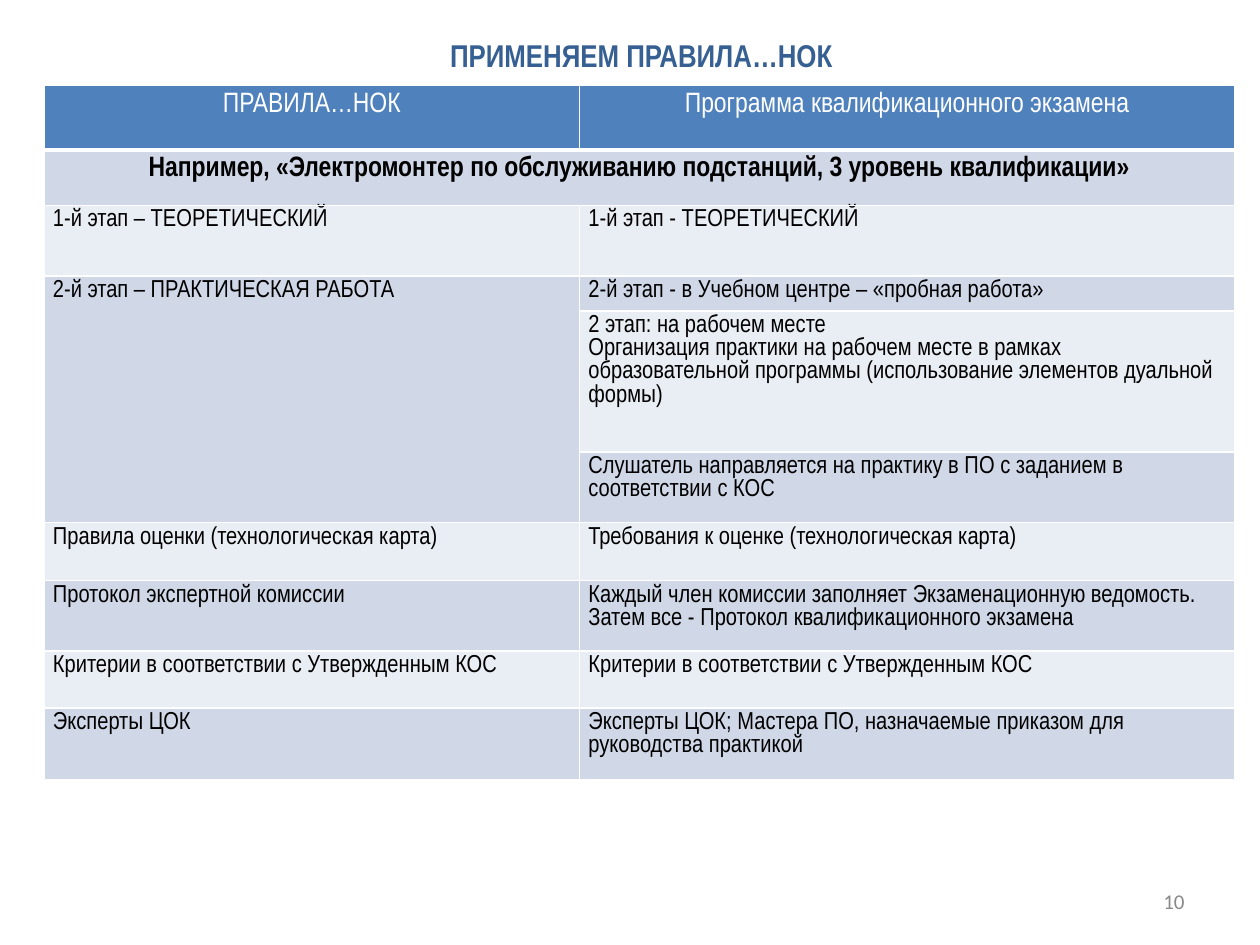
"""Build the slide that compares the assessment rules with the exam programme."""
from lxml import etree
from pptx import Presentation
from pptx.dml.color import RGBColor
from pptx.enum.text import MSO_ANCHOR, PP_ALIGN
from pptx.oxml.ns import qn
from pptx.util import Inches, Pt

LEFT, MID, RIGHT = PP_ALIGN.LEFT, PP_ALIGN.CENTER, PP_ALIGN.RIGHT
JUST = PP_ALIGN.JUSTIFY
CENTER = MSO_ANCHOR.MIDDLE

THEME = {
    "title": {"name": "Arial Narrow", "size": 18, "color": "376092", "bold": True},
    "head": {"name": "Arial Narrow", "size": 16, "color": "FFFFFF", "bold": False},
    "lead": {"name": "Arial Narrow", "size": 16, "color": "000000", "bold": True},
    "body": {"name": "Arial Narrow", "size": 14, "color": "000000", "bold": False},
    "page": {"name": "Calibri", "size": 12, "color": "898989", "bold": False},
    "top": "4F81BD",
    "bands": ("D0D8E8", "E9EDF4"),
    "rule": "FFFFFF",
}

TITLE = "ПРИМЕНЯЕМ ПРАВИЛА…НОК"
PAGE = "10"
COLS = (4.25, 5.2)
ROWS = [
    (0.51, "ПРАВИЛА…НОК", "Программа квалификационного экзамена"),
    (0.44, "Например, «Электромонтер по обслуживанию подстанций, "
           "3 уровень квалификации»", ""),
    (0.56, "1-й этап – ТЕОРЕТИЧЕСКИЙ", "1-й этап - ТЕОРЕТИЧЕСКИЙ"),
    (0.28, "2-й этап – ПРАКТИЧЕСКАЯ РАБОТА",
     "2-й этап - в Учебном центре – «пробная работа»"),
    (1.12, "", "2 этап: на рабочем месте\nОрганизация практики на рабочем месте "
               "в рамках образовательной программы (использование элементов "
               "дуальной формы)"),
    (0.56, "", "Слушатель направляется на практику в ПО с заданием в "
               "соответствии с КОС"),
    (0.46, "Правила оценки (технологическая карта)",
     "Требования к оценке (технологическая карта)"),
    (0.56, "Протокол экспертной комиссии",
     "Каждый член комиссии заполняет Экзаменационную ведомость. "
     "Затем все - Протокол квалификационного экзамена"),
    (0.45, "Критерии в соответствии с Утвержденным КОС",
     "Критерии в соответствии с Утвержденным КОС"),
    (0.57, "Эксперты ЦОК",
     "Эксперты ЦОК; Мастера ПО, назначаемые приказом для руководства практикой"),
]
MERGES = [((1, 0), (1, 1)), ((3, 0), (5, 0))]
PADS = {"left": 0.07, "top": 0.03, "right": 0.07, "bottom": 0}


def write(frame, text, style, align):
    frame.text = text
    look = dict(THEME[style])
    look["size"] = Pt(look["size"])
    color = RGBColor.from_string(look.pop("color"))
    for para in frame.paragraphs:
        para.alignment = align
        for run in para.runs:
            for key, value in look.items():
                setattr(run.font, key, value)
            run.font.color.rgb = color


def place(shape, left, top, width, height):
    box = {"left": left, "top": top, "width": width, "height": height}
    for key, value in box.items():
        setattr(shape, key, Inches(value))


def edge(cell, widths):
    props = cell._tc.get_or_add_tcPr()
    for spot, (side, width) in enumerate(widths.items()):
        line = etree.Element(qn("a:ln" + side), w=str(Pt(width)))
        fill = etree.SubElement(line, qn("a:solidFill"))
        etree.SubElement(fill, qn("a:srgbClr"), val=THEME["rule"])
        props.insert(spot, line)


def fill_table(table):
    for col, width in zip(table.columns, COLS):
        col.width = Inches(width)
    for first, last in MERGES:
        table.cell(*first).merge(table.cell(*last))
    for r, (height, *texts) in enumerate(ROWS):
        table.rows[r].height = Inches(height)
        style = {0: "head", 1: "lead"}.get(r, "body")
        shade = THEME["bands"][(r - 1) % 2] if r else THEME["top"]
        for c, text in enumerate(texts):
            cell = table.cell(r, c)
            cell.fill.solid()
            cell.fill.fore_color.rgb = RGBColor.from_string(shade)
            if r > 1:
                for side, pad in PADS.items():
                    setattr(cell, "margin_" + side, Inches(pad))
            edge(cell, {"L": 1, "R": 1, "T": 3 if r == 1 else 1, "B": 1 if r else 3})
            if not cell.is_spanned:
                write(cell.text_frame, text, style, LEFT if r > 1 else MID)
    table.cell(4, 1).text_frame.paragraphs[0].alignment = JUST


def main():
    deck = Presentation()
    deck.slide_width, deck.slide_height = Inches(10), Inches(7.5)
    slide = deck.slides.add_slide(deck.slide_layouts[5])

    title = slide.shapes.title
    place(title, 0.59, 0.13, 9, 0.61)
    title.text_frame.vertical_anchor = CENTER
    write(title.text_frame, TITLE, "title", MID)

    page = slide.shapes.add_textbox(0, 0, 0, 0)
    place(page, 7.17, 6.95, 2.33, 0.4)
    page.text_frame.word_wrap = True
    page.text_frame.vertical_anchor = CENTER
    write(page.text_frame, PAGE, "page", RIGHT)

    tall = sum(row[0] for row in ROWS)
    grid = slide.shapes.add_table(len(ROWS), len(COLS), Inches(0.35), Inches(0.68),
                                  Inches(sum(COLS)), Inches(tall))
    fill_table(grid.table)
    deck.save("out.pptx")


if __name__ == "__main__":
    main()
